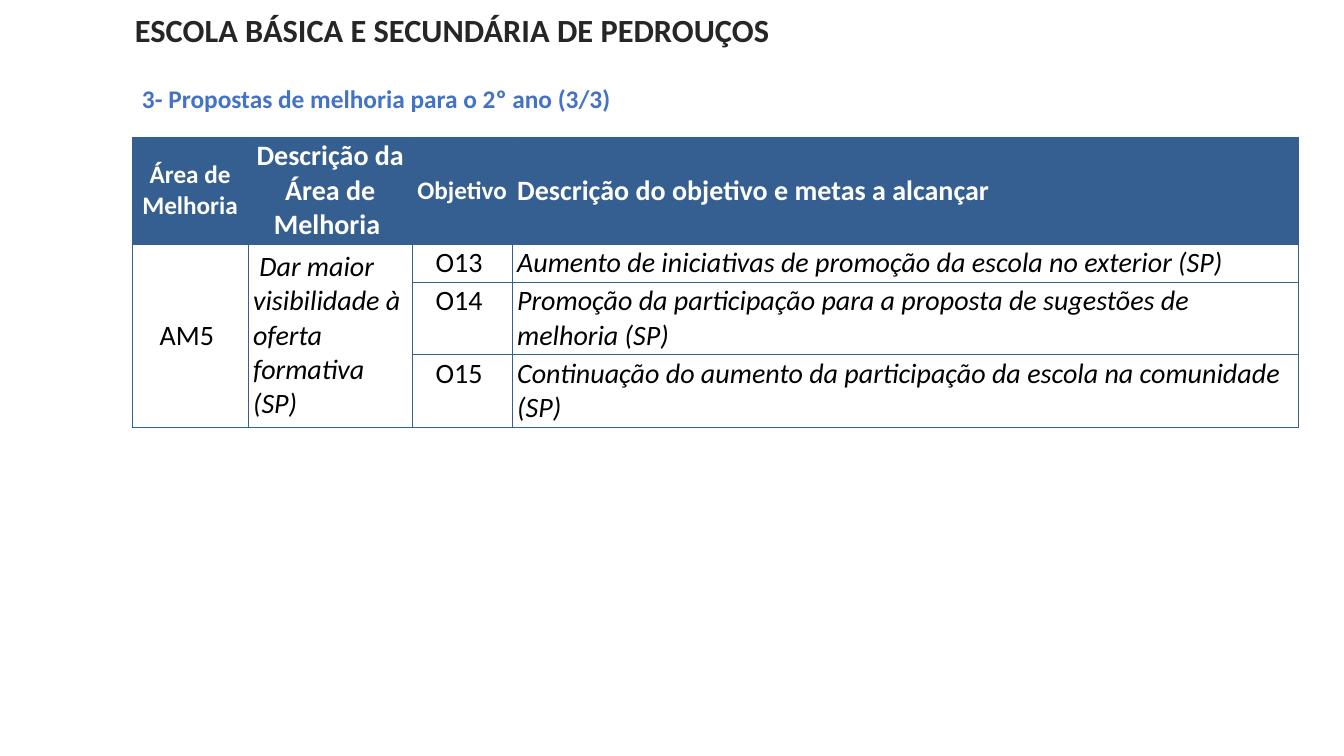
from pptx import Presentation
from pptx.util import Inches, Pt
from pptx.dml.color import RGBColor
from pptx.enum.text import PP_ALIGN, MSO_ANCHOR
from pptx.oxml import parse_xml
from pptx.oxml.ns import nsdecls

COLORS = {"title": "262626", "subtitle": "4472C4", "header": "365F91",
          "white": "FFFFFF", "body": "000000"}
FONT = "Calibri"
TITLE = "ESCOLA BÁSICA E SECUNDÁRIA DE PEDROUÇOS"
SUBTITLE = "3- Propostas de melhoria para o 2º ano (3/3)"

# Header text, font size, centred
HEADERS = [
    ("Área de Melhoria", 18, True),
    ("Descrição da Área de Melhoria ", 20, True),
    ("Objetivo", 18, False),
    ("Descrição do objetivo e metas a alcançar", 20, False),
]
AREA = "AM5 "
AREA_DESCRIPTION = " Dar maior visibilidade à oferta formativa (SP) "
OBJECTIVES = [
    ("O13 ", "Aumento de iniciativas de promoção da escola no exterior (SP) "),
    ("O14 ", "Promoção da participação para a proposta de sugestões de melhoria (SP) "),
    ("O15 ", "Continuação do aumento da participação da escola na comunidade (SP) "),
]
COL_WIDTHS = [1.15, 1.63, 0.99, 7.8]
ROW_HEIGHTS = [1.06, 0.38, 0.72, 0.72]


def write(tf, text, size=20, color="body", bold=False, italic=False, center=False):
    tf.word_wrap = True
    p = tf.paragraphs[0]
    p.alignment = PP_ALIGN.CENTER if center else PP_ALIGN.LEFT
    r = p.add_run()
    r.text = text
    f = r.font
    f.name, f.size, f.bold, f.italic = FONT, Pt(size), bold, italic
    f.color.rgb = RGBColor.from_string(COLORS[color])


def add_text(slide, box, text, **fmt):
    tf = slide.shapes.add_textbox(*map(Inches, box)).text_frame
    tf.vertical_anchor = MSO_ANCHOR.MIDDLE
    write(tf, text, **fmt)


def style_cell(cell, fill):
    """Set margins, four thin borders and a solid fill."""
    cell.margin_left = cell.margin_right = Inches(0.05)
    cell.margin_top = cell.margin_bottom = Inches(0.02)
    cell.vertical_anchor = MSO_ANCHOR.MIDDLE
    tc_pr = cell._tc.get_or_add_tcPr()
    for side in ("lnL", "lnR", "lnT", "lnB"):
        tc_pr.append(parse_xml(
            f'<a:{side} {nsdecls("a")} w="{Pt(0.6)}"><a:solidFill>'
            f'<a:srgbClr val="{COLORS["header"]}"/></a:solidFill></a:{side}>'))
    cell.fill.solid()
    cell.fill.fore_color.rgb = RGBColor.from_string(COLORS[fill])


def add_objectives_table(slide):
    table = slide.shapes.add_table(
        len(ROW_HEIGHTS), len(COL_WIDTHS), Inches(1.31), Inches(1.36),
        Inches(sum(COL_WIDTHS)), Inches(sum(ROW_HEIGHTS))).table
    table.first_row = table.horz_banding = False
    for col, width in zip(table.columns, COL_WIDTHS):
        col.width = Inches(width)
    for i, (row, height) in enumerate(zip(table.rows, ROW_HEIGHTS)):
        row.height = Inches(height)
        for cell in row.cells:
            style_cell(cell, "white" if i else "header")

    for cell, (text, size, center) in zip(table.rows[0].cells, HEADERS):
        write(cell.text_frame, text, size=size, color="white", bold=True, center=center)
    for col in (0, 1):
        table.cell(1, col).merge(table.cell(len(OBJECTIVES), col))
    write(table.cell(1, 0).text_frame, AREA, center=True)
    write(table.cell(1, 1).text_frame, AREA_DESCRIPTION, italic=True)
    for i, (code, goal) in enumerate(OBJECTIVES, 1):
        code_cell, goal_cell = table.cell(i, 2), table.cell(i, 3)
        code_cell.vertical_anchor = goal_cell.vertical_anchor = MSO_ANCHOR.TOP
        write(code_cell.text_frame, code, center=True)
        write(goal_cell.text_frame, goal, italic=True)


def main():
    prs = Presentation()
    prs.slide_width, prs.slide_height = Inches(13.33), Inches(7.5)
    slide = prs.slides.add_slide(prs.slide_layouts[6])
    add_text(slide, (1.24, 0.05, 8.33, 0.48), TITLE, size=23.1, color="title", bold=True)
    add_objectives_table(slide)
    add_text(slide, (1.31, 0.64, 11.38, 0.68), SUBTITLE,
             size=18.1, color="subtitle", bold=True)
    prs.save("out.pptx")


if __name__ == "__main__":
    main()
